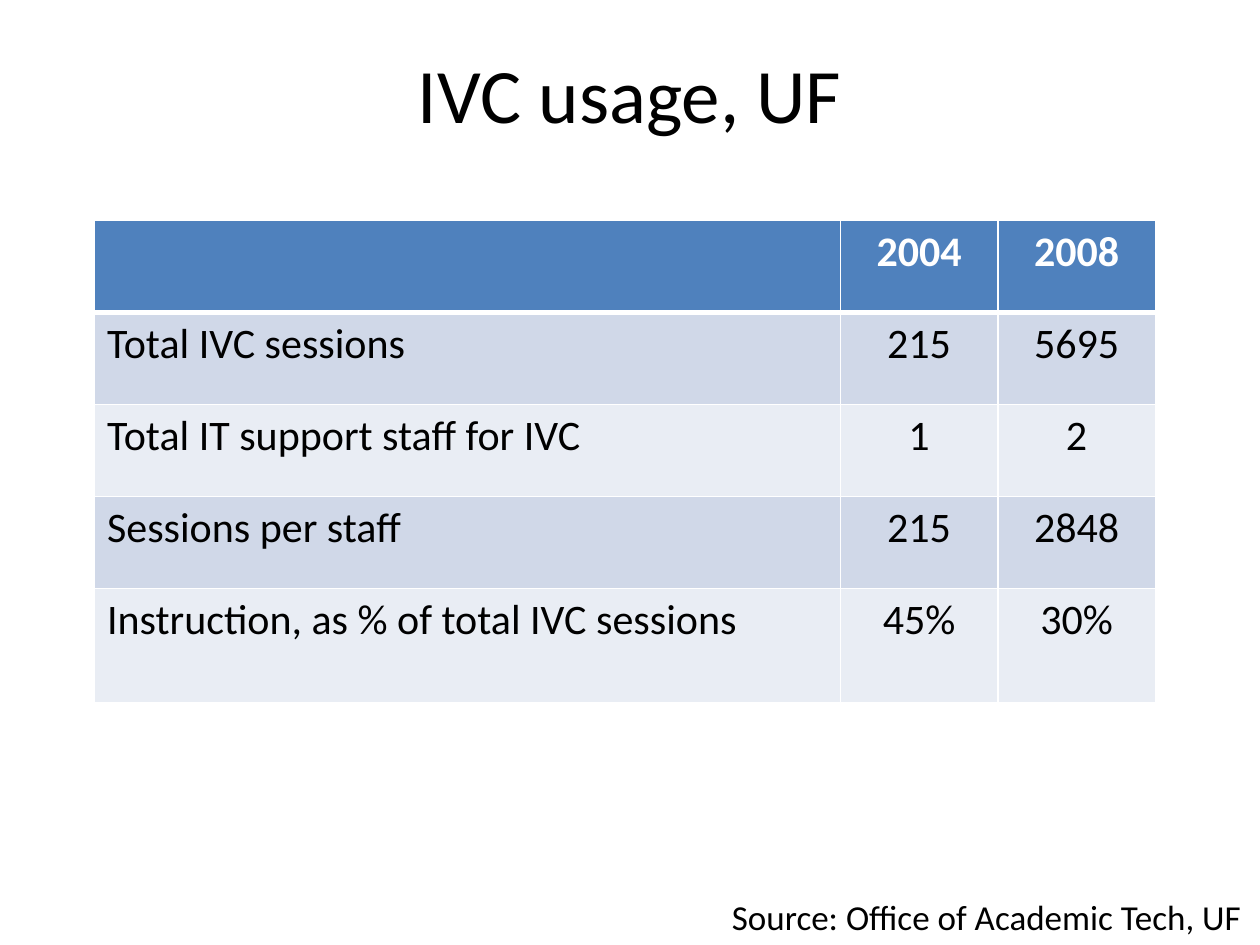
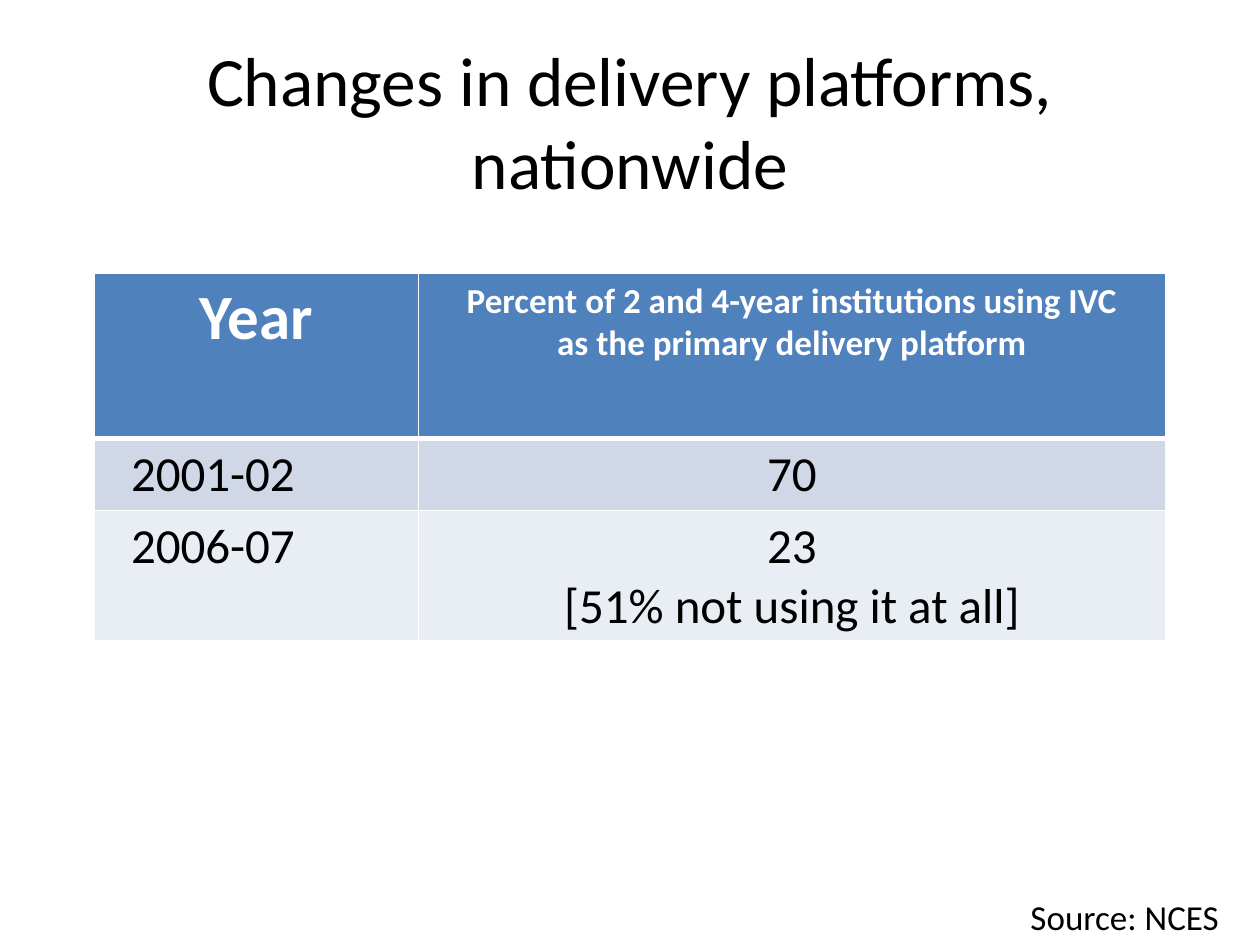
"""Build two slides on interactive video conferencing usage."""
from dataclasses import dataclass

from lxml.etree import SubElement
from pptx import Presentation
from pptx.dml.color import RGBColor
from pptx.enum.text import MSO_ANCHOR, MSO_AUTO_SIZE, PP_ALIGN
from pptx.oxml.ns import qn
from pptx.slide import Slide
from pptx.table import _Cell
from pptx.text.text import TextFrame
from pptx.util import Inches, Pt


@dataclass(frozen=True)
class Theme:
    font: str = "Calibri"
    text: str = "000000"
    light: str = "FFFFFF"
    header: str = "4F81BD"
    bands: tuple[str, str] = ("D0D8E8", "E9EDF4")
    title_size: float = 44
    long_title_size: float = 39.6
    year_size: float = 36
    large_size: float = 28
    body_size: float = 24
    small_size: float = 20
    border: float = 1
    header_border: float = 3


THEME = Theme()


@dataclass(frozen=True)
class Box:
    text: str
    left: float
    top: float
    width: float
    height: float
    size: float


@dataclass(frozen=True)
class TableSpec:
    left: float
    top: float
    column_widths: tuple[float, ...]
    row_heights: tuple[float, ...]
    rows: tuple[tuple[str, ...], ...]
    header_sizes: tuple[float, ...]
    body_size: float
    label_indent: float = 0.1


@dataclass(frozen=True)
class SlideSpec:
    title: Box
    table: TableSpec
    source: Box


SLIDES = (
    SlideSpec(
        Box("IVC usage, UF", 0.5, 0.3, 9, 0.87, THEME.title_size),
        TableSpec(
            0.75, 1.75, (5.92, 1.25, 1.25), (0.73,) * 4 + (0.91,),
            (
                ("", "2004", "2008"),
                ("Total IVC sessions", "215", "5695"),
                ("Total IT support staff for IVC", "1", "2"),
                ("Sessions per staff", "215", "2848"),
                ("Instruction, as % of total IVC sessions", "45%", "30%"),
            ),
            (THEME.body_size,) * 3, THEME.body_size,
        ),
        Box("Source: Office of Academic Tech, UF", 5.71, 7.06, 4.29, 0.44, THEME.small_size),
    ),
    SlideSpec(
        Box("Changes in delivery platforms, nationwide", 0.5, 0.33, 9, 1.25, THEME.long_title_size),
        TableSpec(
            0.75, 2.17, (2.57, 5.93), (1.31, 0.57, 1.03),
            (
                ("Year", "Percent of 2 and 4-year institutions using IVC\nas the primary delivery platform"),
                ("2001-02", "70"),
                ("2006-07", "23\n[51% not using it at all]"),
            ),
            (THEME.year_size, THEME.small_size), THEME.large_size, 0.29,
        ),
        Box("Source: NCES", 8.08, 7.06, 1.71, 0.44, THEME.small_size),
    ),
)


def write_text(frame: TextFrame, text: str, *, size: float, color: str = THEME.text,
               bold: bool = False, align: PP_ALIGN = PP_ALIGN.LEFT) -> None:
    """Write each line of the text as a formatted paragraph."""
    for index, line in enumerate(text.split("\n")):
        paragraph = frame.add_paragraph() if index else frame.paragraphs[0]
        paragraph.alignment = align
        if line:
            font = paragraph.add_run().font
            paragraph.runs[0].text = line
        else:
            font = paragraph.font
        font.name = THEME.font
        font.size = Pt(size)
        font.bold = bold
        font.color.rgb = RGBColor.from_string(color)


def add_box(slide: Slide, box: Box) -> TextFrame:
    """Add an empty text box and return its text frame."""
    bounds = (Inches(value) for value in (box.left, box.top, box.width, box.height))
    return slide.shapes.add_textbox(*bounds).text_frame


def add_title(slide: Slide, box: Box) -> None:
    """Add the centred slide title."""
    frame = add_box(slide, box)
    frame.word_wrap = True
    frame.vertical_anchor = MSO_ANCHOR.MIDDLE
    write_text(frame, box.text, size=box.size, align=PP_ALIGN.CENTER)


def add_source(slide: Slide, box: Box) -> None:
    """Add the source line at the foot of the slide."""
    frame = add_box(slide, box)
    frame.word_wrap = False
    frame.auto_size = MSO_AUTO_SIZE.SHAPE_TO_FIT_TEXT
    write_text(frame, box.text, size=box.size)


def set_borders(cell: _Cell, top: float, bottom: float) -> None:
    """Draw light borders around a cell."""
    properties = cell._tc.get_or_add_tcPr()
    widths = {"a:lnL": THEME.border, "a:lnR": THEME.border, "a:lnT": top, "a:lnB": bottom}
    for tag, width in widths.items():
        line = SubElement(properties, qn(tag), w=str(Pt(width)))
        fill = SubElement(line, qn("a:solidFill"))
        SubElement(fill, qn("a:srgbClr"), val=THEME.light)


def add_data_table(slide: Slide, spec: TableSpec) -> None:
    """Add a table with a header row and banded body rows."""
    table = slide.shapes.add_table(
        len(spec.rows), len(spec.column_widths), Inches(spec.left), Inches(spec.top),
        Inches(sum(spec.column_widths)), Inches(sum(spec.row_heights)),
    ).table
    for column, width in zip(table.columns, spec.column_widths):
        column.width = Inches(width)
    for row_index, values in enumerate(spec.rows):
        table.rows[row_index].height = Inches(spec.row_heights[row_index])
        is_header = row_index == 0
        fill_color = THEME.header if is_header else THEME.bands[(row_index - 1) % 2]
        for column_index, value in enumerate(values):
            cell = table.cell(row_index, column_index)
            is_label = not is_header and column_index == 0
            set_borders(
                cell,
                THEME.header_border if row_index == 1 else THEME.border,
                THEME.header_border if is_header else THEME.border,
            )
            cell.fill.solid()
            cell.fill.fore_color.rgb = RGBColor.from_string(fill_color)
            if is_label:
                cell.margin_left = Inches(spec.label_indent)
            write_text(
                cell.text_frame, value,
                size=spec.header_sizes[column_index] if is_header else spec.body_size,
                color=THEME.light if is_header else THEME.text,
                bold=is_header,
                align=PP_ALIGN.LEFT if is_label else PP_ALIGN.CENTER,
            )


def main() -> None:
    """Build and save the presentation."""
    presentation = Presentation()
    presentation.slide_width = Inches(10)
    presentation.slide_height = Inches(7.5)
    for spec in SLIDES:
        slide = presentation.slides.add_slide(presentation.slide_layouts[6])
        add_title(slide, spec.title)
        add_data_table(slide, spec.table)
        add_source(slide, spec.source)
    presentation.save("out.pptx")


if __name__ == "__main__":
    main()
